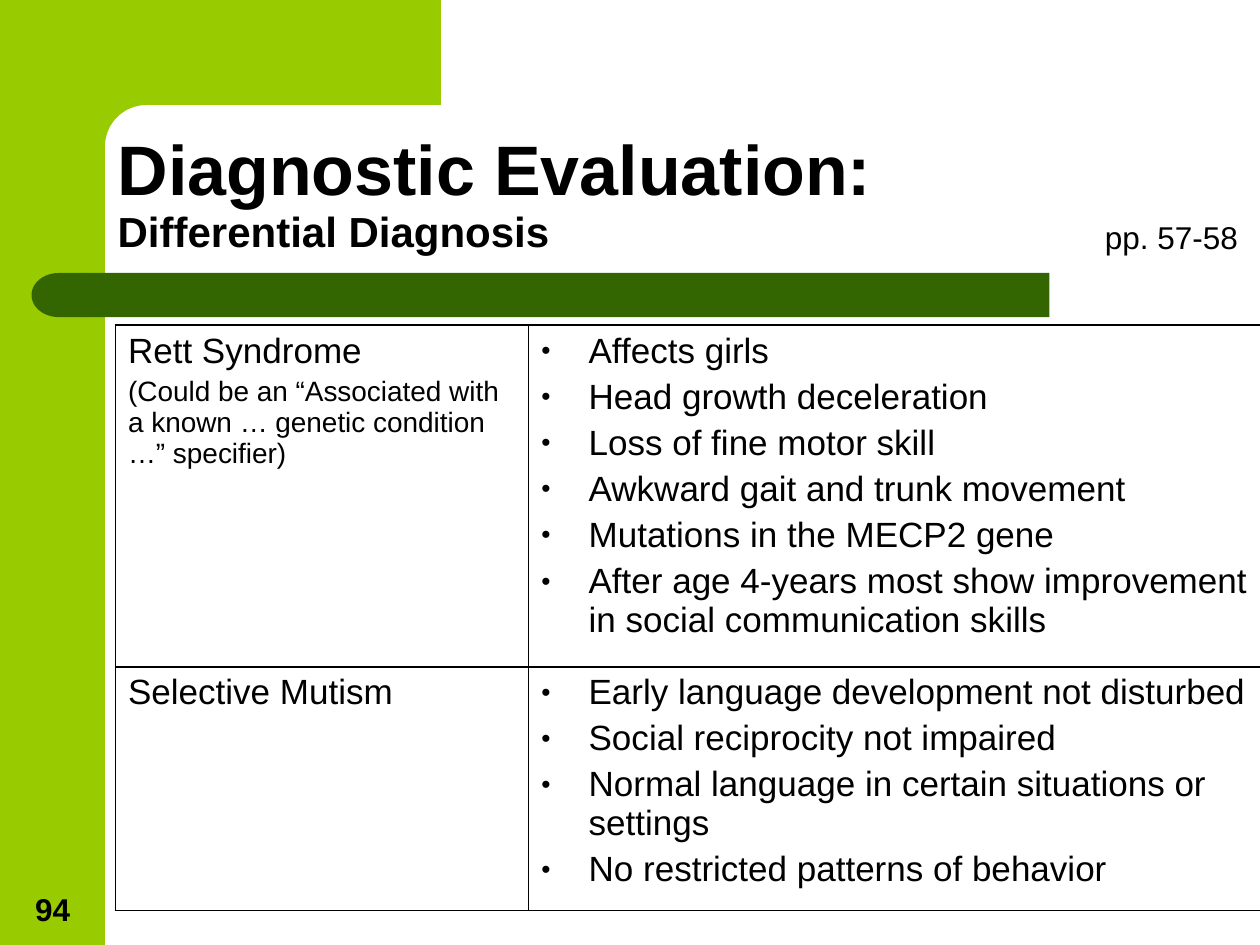
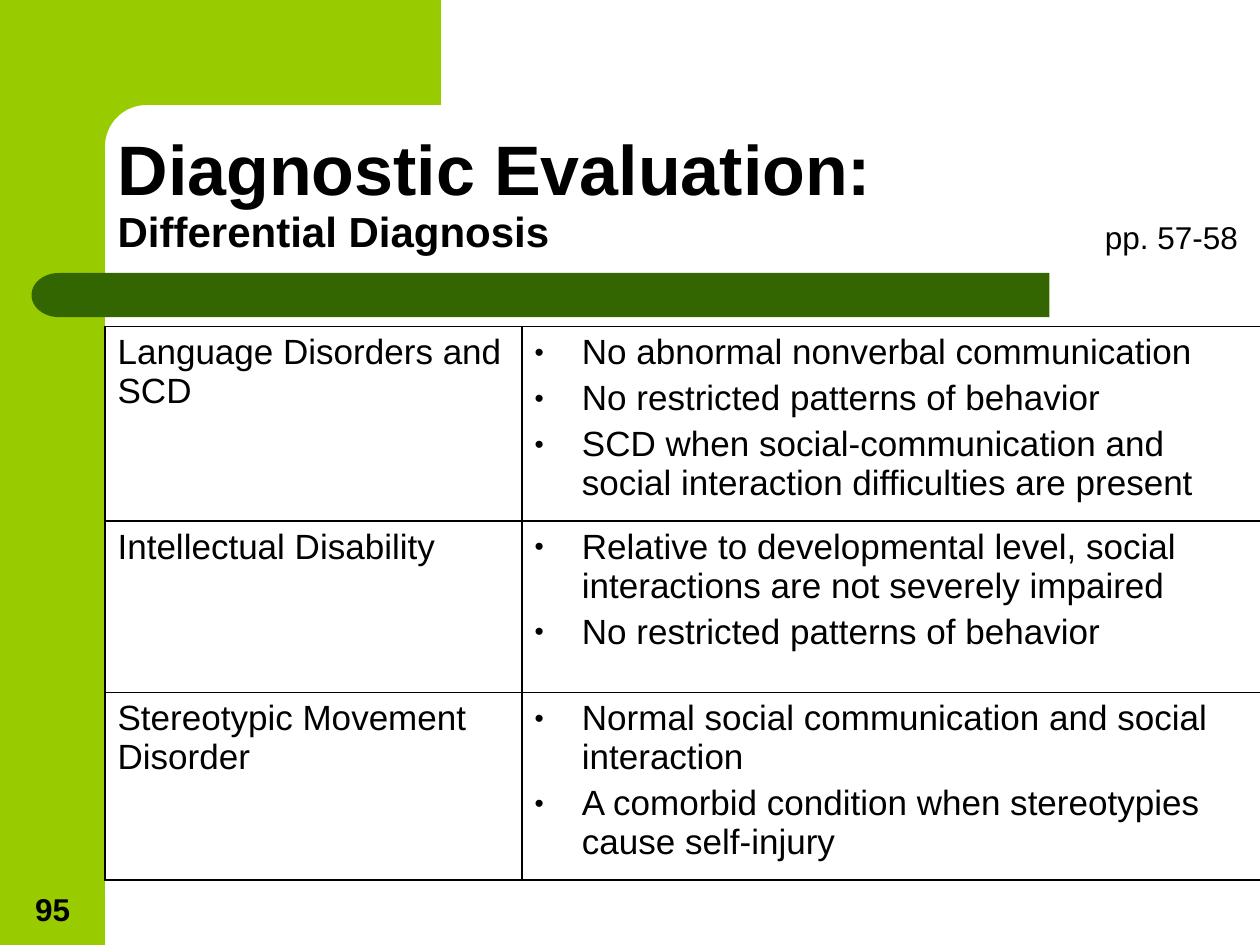
import math

import lxml.etree
import pptx
import pptx.dml.color
import pptx.enum.shapes
import pptx.enum.text
import pptx.oxml.ns
import pptx.util

Inches = pptx.util.Inches
Pt = pptx.util.Pt
RGBColor = pptx.dml.color.RGBColor
Shapes = pptx.enum.shapes.MSO_SHAPE
Align = pptx.enum.text.PP_ALIGN
Anchor = pptx.enum.text.MSO_ANCHOR
qn = pptx.oxml.ns.qn

LIME = RGBColor(0x99, 0xCC, 0x00)
FOREST = RGBColor(0x33, 0x66, 0x00)
BLACK = RGBColor(0x00, 0x00, 0x00)
WHITE = RGBColor(0xFF, 0xFF, 0xFF)
FONT = "Arial"

TITLE = "Diagnostic Evaluation:\vDifferential Diagnosis"
PAGES = "pp. 57-58"
SIDE_WIDTH = 5 / 6
CORNER_RADIUS = 0.33
BAR_TOP = 13 / 6
ROW_HEIGHT = 1.36  # least height, rows grow with their text
BULLET_INDENT = Inches(3 / 8)

# Each row: (text, size) paragraphs on the left, bullets on the right
RETT_AND_MUTISM = [
    ([("Rett Syndrome", 20),
      ("(Could be an “Associated with a known … genetic condition …” specifier)", 16)],
     ["Affects girls",
      "Head growth deceleration",
      "Loss of fine motor skill",
      "Awkward gait and trunk movement",
      "Mutations in the MECP2 gene",
      "After age 4-years most show improvement in social communication skills"]),
    ([("Selective Mutism", 20)],
     ["Early language development not disturbed",
      "Social reciprocity not impaired",
      "Normal language in certain situations or settings",
      "No restricted patterns of behavior"]),
]
LANGUAGE_TO_MOVEMENT = [
    ([("Language Disorders and SCD", 20)],
     ["No abnormal nonverbal communication",
      "No restricted patterns of behavior",
      "SCD when social-communication and social interaction difficulties are present"]),
    ([("Intellectual Disability", 20)],
     ["Relative to developmental level, social interactions are not severely impaired",
      "No restricted patterns of behavior"]),
    ([("Stereotypic Movement Disorder", 20)],
     ["Normal social communication and social interaction",
      "A comorbid condition when stereotypies cause self-injury"]),
]


class Deck:
    def __init__(self):
        self.presentation = pptx.Presentation()
        self.presentation.slide_width = Inches(10)
        self.presentation.slide_height = Inches(7.5)
        self.slide = None

    def add_slide(self, number):
        layout = self.presentation.slide_layouts[5]
        self.slide = self.presentation.slides.add_slide(layout)
        self.frame()
        self.title()
        self.text(number, 0, 6.88, SIDE_WIDTH, 0.53, bold=True,
                  align=Align.CENTER, anchor=Anchor.BOTTOM)
        self.text(PAGES, 8.67, 1.68, 1.27, 0.4, wrap=False)

    def paint(self, shape, color):
        shape.shadow.inherit = False
        shape.fill.solid()
        shape.fill.fore_color.rgb = color
        shape.line.fill.background()

    def shape(self, kind, left, top, width, height, color):
        shape = self.slide.shapes.add_shape(
            kind, Inches(left), Inches(top), Inches(width), Inches(height))
        self.paint(shape, color)
        return shape

    def frame(self):
        # Side band and top block with a rounded inner corner
        self.shape(Shapes.RECTANGLE, 0, 0, SIDE_WIDTH, 7.5, LIME)
        center = SIDE_WIDTH + CORNER_RADIUS
        angles = [math.radians(270 - step * 5) for step in range(19)]
        arc = [(center + CORNER_RADIUS * math.cos(angle),
                center + CORNER_RADIUS * math.sin(angle)) for angle in angles]
        outline = [(3.5, SIDE_WIDTH), *arc, (SIDE_WIDTH, 1.28), (0.5, 1.28), (0.5, 0)]
        builder = self.slide.shapes.build_freeform(Inches(3.5), 0)
        builder.add_line_segments([(Inches(x), Inches(y)) for x, y in outline])
        self.paint(builder.convert_to_shape(), LIME)

        # Dark bar under the title, round at its left end
        self.shape(Shapes.RECTANGLE, 0.67, BAR_TOP, 7.66, 0.35, FOREST)
        cap = self.shape(Shapes.FLOWCHART_DELAY, 0.25, BAR_TOP, 0.43, 0.35, FOREST)
        cap.rotation = 180

    def format_run(self, run, size, bold=False):
        run.font.name = FONT
        run.font.size = Pt(size)
        run.font.bold = bold
        run.font.color.rgb = BLACK

    def title(self):
        title = self.slide.shapes.title
        title.left, title.top = Inches(SIDE_WIDTH), Inches(SIDE_WIDTH)
        title.width, title.height = Inches(8.67), Inches(1.25)
        title.text_frame.text = TITLE
        title.text_frame.vertical_anchor = Anchor.BOTTOM
        title.text_frame.auto_size = pptx.enum.text.MSO_AUTO_SIZE.NONE
        paragraph = title.text_frame.paragraphs[0]
        paragraph.alignment = Align.LEFT
        paragraph.line_spacing = 0.9
        for run, size in zip(paragraph.runs, (40, 24)):
            self.format_run(run, size, bold=True)

    def text(self, text, left, top, width, height, bold=False,
             align=Align.LEFT, anchor=Anchor.TOP, wrap=True):
        box = self.slide.shapes.add_textbox(
            Inches(left), Inches(top), Inches(width), Inches(height))
        box.text_frame.text = text
        box.text_frame.word_wrap = wrap
        box.text_frame.vertical_anchor = anchor
        paragraph = box.text_frame.paragraphs[0]
        paragraph.alignment = align
        self.format_run(paragraph.runs[0], 18, bold)

    def space_before(self, paragraph):
        # Spacing relative to the line height
        properties = paragraph._p.get_or_add_pPr()
        spacing = lxml.etree.SubElement(properties, qn("a:spcBef"))
        lxml.etree.SubElement(spacing, qn("a:spcPct"), val="20000")

    def bullet(self, paragraph):
        properties = paragraph._p.get_or_add_pPr()
        properties.set("marL", str(BULLET_INDENT))
        properties.set("indent", str(-BULLET_INDENT))
        color = lxml.etree.SubElement(properties, qn("a:buClr"))
        lxml.etree.SubElement(color, qn("a:srgbClr"), val=str(BLACK))
        lxml.etree.SubElement(properties, qn("a:buSzPct"), val="75000")
        lxml.etree.SubElement(properties, qn("a:buFont"), typeface=FONT)
        lxml.etree.SubElement(properties, qn("a:buChar"), char="•")

    def border(self, cell):
        properties = cell._tc.get_or_add_tcPr()
        for side in ("a:lnL", "a:lnR", "a:lnT", "a:lnB"):
            line = lxml.etree.SubElement(properties, qn(side), w=str(Pt(1)))
            fill = lxml.etree.SubElement(line, qn("a:solidFill"))
            lxml.etree.SubElement(fill, qn("a:srgbClr"), val=str(BLACK))

    def cell(self, cell, items, bulleted=False):
        self.border(cell)
        cell.fill.solid()
        cell.fill.fore_color.rgb = WHITE
        cell.text_frame.text = "\n".join(text for text, size in items)
        for paragraph, (text, size) in zip(cell.text_frame.paragraphs, items):
            self.space_before(paragraph)
            self.format_run(paragraph.runs[0], size)
            if bulleted:
                self.bullet(paragraph)

    def table(self, left, top, column_widths, rows):
        table = self.slide.shapes.add_table(
            len(rows), 2, Inches(left), Inches(top),
            Inches(sum(column_widths)), Inches(ROW_HEIGHT * len(rows))).table
        table.first_row = False
        table.horz_banding = False
        for column, width in zip(table.columns, column_widths):
            column.width = Inches(width)
        for index, (disorder, features) in enumerate(rows):
            table.rows[index].height = Inches(ROW_HEIGHT)
            self.cell(table.cell(index, 0), disorder)
            self.cell(table.cell(index, 1), [(text, 20) for text in features], bulleted=True)


def main():
    deck = Deck()

    # Rett syndrome and selective mutism
    deck.add_slide("94")
    deck.table(11 / 12, 2.58, (3.28, 5.81), RETT_AND_MUTISM)

    # Language, intellectual and movement disorders
    deck.add_slide("95")
    deck.table(SIDE_WIDTH, 2.59, (3.31, 5.86), LANGUAGE_TO_MOVEMENT)

    deck.presentation.save("out.pptx")


if __name__ == "__main__":
    main()
